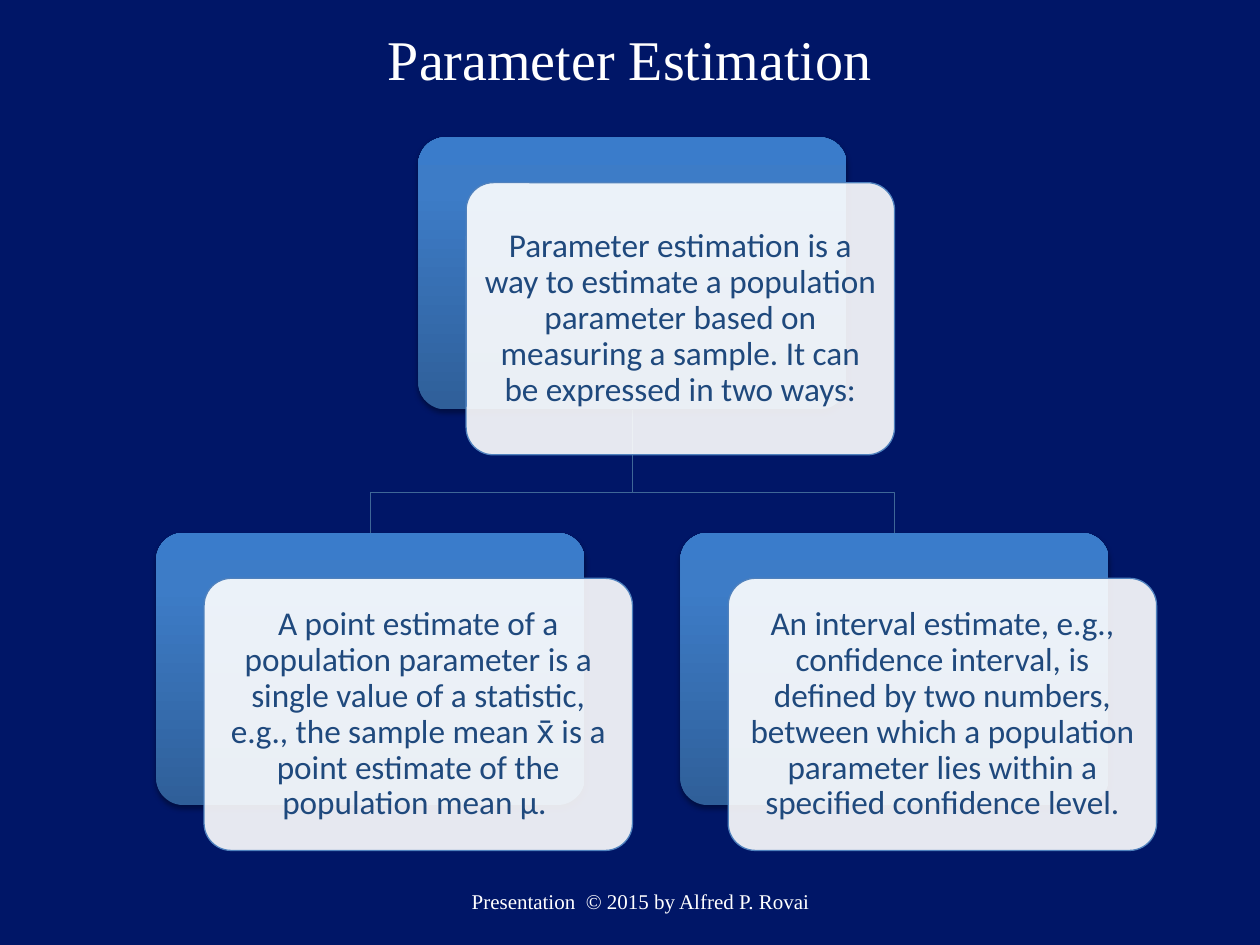
from lxml import etree
from pptx import Presentation
from pptx.dml.color import RGBColor
from pptx.enum.shapes import MSO_SHAPE
from pptx.enum.text import MSO_ANCHOR, PP_ALIGN
from pptx.oxml import parse_xml
from pptx.oxml.ns import qn
from pptx.util import Inches, Pt

ROUNDED = MSO_SHAPE.ROUNDED_RECTANGLE
MIDDLE = MSO_ANCHOR.MIDDLE
CENTER = PP_ALIGN.CENTER
DRAWING_NS = "http://schemas.openxmlformats.org/drawingml/2006/main"

# Content
TITLE = "Parameter Estimation"
ROOT = ("Parameter estimation is a way to estimate a population parameter based on "
        "measuring a sample. It can be expressed in two ways:")
BRANCHES = [
    "A point estimate of a population parameter is a single value of a statistic, e.g., "
    "the sample mean x̄ is a point estimate of the population mean μ. ",
    "An interval estimate, e.g., confidence interval, is defined by two numbers, "
    "between which a population parameter lies within a specified confidence level.",
]
FOOTER = "Presentation  © 2015 by Alfred P. Rovai"

# Layout in inches: each node is a panel with a card offset down and right
PANEL_WIDTH, PANEL_HEIGHT = 3.4, 2.16
CARD_DX, CARD_DY = 0.38, 0.36
CARD_MARGIN = 0.08
ROOT_CENTER, BRANCH_SPACING = 5.02, 4.16
ROOT_TOP, BRANCH_TOP, ELBOW_Y = 1.09, 4.23, 3.91
PANEL_STOPS = [(0, "2F5F99"), (80, "3D7CC7"), (100, "3A7CCB")]


def color(value):
    return RGBColor.from_string(value)


def write(frame, text, size, font, value):
    frame.word_wrap = True
    frame.vertical_anchor = MIDDLE
    paragraph = frame.paragraphs[0]
    paragraph.alignment = CENTER
    run = paragraph.add_run()
    run.text = text
    run.font.size = Pt(size)
    run.font.name = font
    run.font.color.rgb = color(value)
    return paragraph


def add_box(slide, left, top):
    box = slide.shapes.add_shape(ROUNDED, Inches(left), Inches(top),
                                 Inches(PANEL_WIDTH), Inches(PANEL_HEIGHT))
    box.adjustments[0] = 0.1
    box.shadow.inherit = False
    return box


def add_panel(slide, left, top):
    panel = add_box(slide, left, top)
    panel.line.fill.background()
    # Gradient running from bottom to top
    panel.fill.gradient()
    panel.fill.gradient_angle = 90
    stop_list = panel.element.spPr.find(".//" + qn("a:gsLst"))
    for stop in list(stop_list):
        stop_list.remove(stop)
    for position, value in PANEL_STOPS:
        stop = etree.SubElement(stop_list, qn("a:gs"), pos=str(position * 1000))
        etree.SubElement(stop, qn("a:srgbClr"), val=value)
    # Soft shadow below
    panel.element.spPr.find(qn("a:effectLst")).append(parse_xml(
        f'<a:outerShdw xmlns:a="{DRAWING_NS}" blurRad="{Pt(3.1)}" dist="{Pt(1.8)}" '
        'dir="5400000" rotWithShape="0"><a:srgbClr val="000000">'
        '<a:alpha val="35000"/></a:srgbClr></a:outerShdw>'))


def add_card(slide, left, top, text):
    card = add_box(slide, left, top)
    card.fill.solid()
    card.fill.fore_color.rgb = color("FFFFFF")
    fill_color = card.element.spPr.find(qn("a:solidFill")).find(qn("a:srgbClr"))
    etree.SubElement(fill_color, qn("a:alpha"), val="90000")
    card.line.color.rgb = color("4F81BD")
    card.line.width = Pt(0.75)
    frame = card.text_frame
    frame.margin_left = frame.margin_right = Inches(CARD_MARGIN)
    frame.margin_top = frame.margin_bottom = Inches(CARD_MARGIN)
    paragraph = write(frame, text, 19, "Calibri", "1F497D")
    paragraph.line_spacing = 0.9


def add_node(slide, center, top, text):
    left = center - PANEL_WIDTH / 2
    add_panel(slide, left, top)
    add_card(slide, left + CARD_DX, top + CARD_DY, text)


def add_elbow(slide, end_center):
    start_y = ROOT_TOP + PANEL_HEIGHT
    points = [(ROOT_CENTER, ELBOW_Y), (end_center, ELBOW_Y), (end_center, BRANCH_TOP)]
    builder = slide.shapes.build_freeform(Inches(ROOT_CENTER), Inches(start_y))
    builder.add_line_segments([(Inches(x), Inches(y)) for x, y in points], close=False)
    elbow = builder.convert_to_shape()
    elbow.fill.background()
    elbow.line.color.rgb = color("3F6797")
    elbow.line.width = Pt(0.75)
    elbow.shadow.inherit = False


def main():
    presentation = Presentation()
    presentation.slide_width, presentation.slide_height = Inches(10), Inches(7.5)
    slide = presentation.slides.add_slide(presentation.slide_layouts[5])
    slide.background.fill.solid()
    slide.background.fill.fore_color.rgb = color("001667")

    # Title
    title = slide.shapes.title
    title.left, title.top = Inches(0.5), Inches(0)
    title.width, title.height = Inches(9), Inches(0.92)
    write(title.text_frame, TITLE, 32, "Times New Roman", "FFFFFF")

    # Hierarchy: lines first, so that the nodes cover them
    first_center = ROOT_CENTER - BRANCH_SPACING * (len(BRANCHES) - 1) / 2
    centers = [first_center + i * BRANCH_SPACING for i in range(len(BRANCHES))]
    for center in reversed(centers):
        add_elbow(slide, center)
    add_node(slide, ROOT_CENTER, ROOT_TOP, ROOT)
    for center, text in zip(centers, BRANCHES):
        add_node(slide, center, BRANCH_TOP, text)

    # Footer
    footer = slide.shapes.add_textbox(Inches(1.75), Inches(6.95), Inches(6.67), Inches(0.4))
    write(footer.text_frame, FOOTER, 12, "Times New Roman", "FFFFFF")

    presentation.save("out.pptx")


if __name__ == "__main__":
    main()
